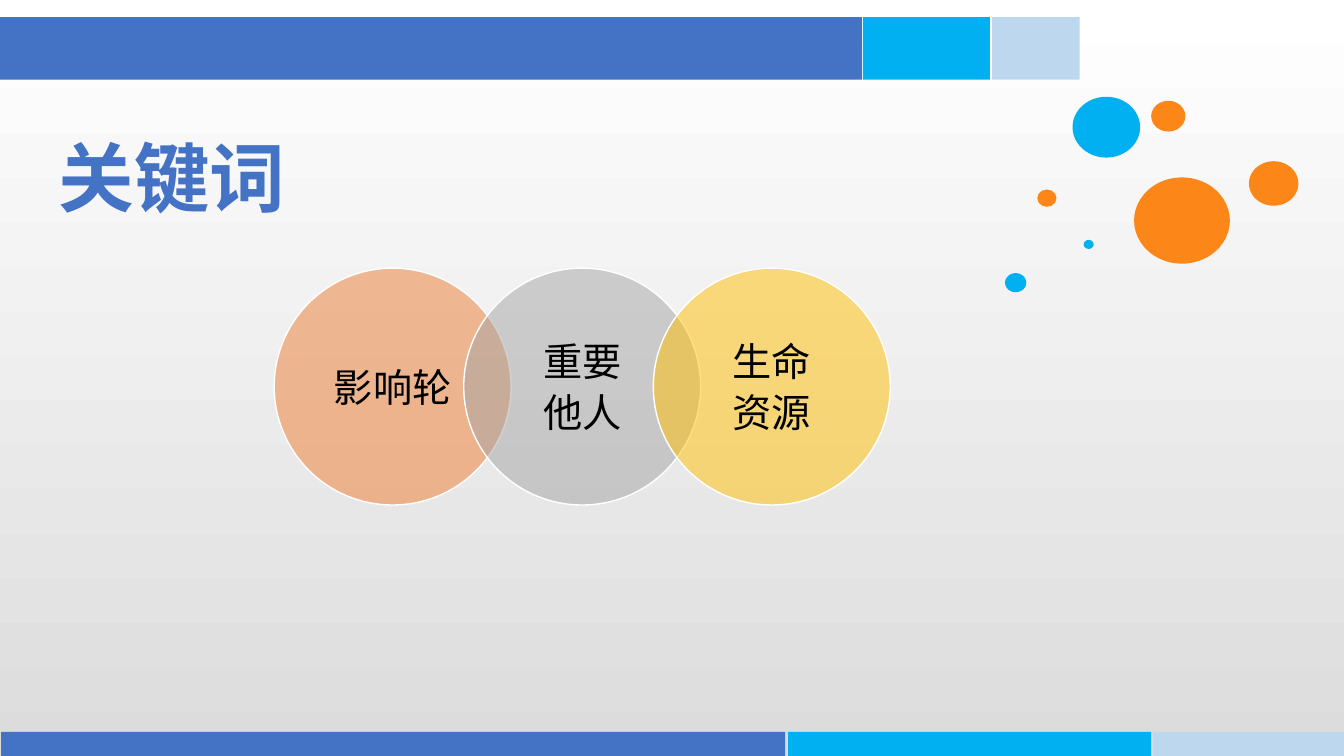
from lxml.etree import SubElement
from pptx import Presentation
from pptx.dml.color import RGBColor
from pptx.enum.shapes import MSO_SHAPE as Preset
from pptx.enum.text import MSO_ANCHOR as Anchor, MSO_AUTO_SIZE as AutoSize, PP_ALIGN as Align
from pptx.oxml.ns import qn
from pptx.util import Inches, Pt

BLUE = RGBColor(0x44, 0x72, 0xC4)
CYAN = RGBColor(0x00, 0xB0, 0xF0)
PALE = RGBColor(0xBD, 0xD7, 0xEE)
ORANGE = RGBColor(0xFC, 0x86, 0x18)
CORAL = RGBColor(0xED, 0x7D, 0x31)
GREY = RGBColor(0xA5, 0xA5, 0xA5)
GOLD = RGBColor(0xFF, 0xC0, 0x00)
WHITE = RGBColor(0xFF, 0xFF, 0xFF)
SILVER = RGBColor(0xDC, 0xDC, 0xDC)
BLACK = RGBColor(0x00, 0x00, 0x00)
CJK = "Noto Sans CJK SC"

deck = Presentation()
deck.slide_width, deck.slide_height = Inches(13.33), Inches(7.5)
COL, ROW = deck.slide_width / 100, deck.slide_height / 100
slide = deck.slides.add_slide(deck.slide_layouts[5])


def add_block(parent, preset, left, top, width, height, color):
    block = parent.add_shape(preset, round(left * COL), round(top * ROW),
                             round(width * COL), round(height * ROW))
    block.shadow.inherit = False
    block.fill.solid()
    block.fill.fore_color.rgb = color
    block.line.fill.background()
    return block


def write(frame, text, *, size, color, font, bold=False, spacing=1.0, after=0):
    frame.word_wrap = True
    frame.auto_size = AutoSize.NONE
    frame.vertical_anchor = Anchor.MIDDLE
    frame.text = text
    for paragraph in frame.paragraphs:
        paragraph.alignment = Align.CENTER
        paragraph.line_spacing = spacing
        paragraph.space_after = Pt(after)
        for run in paragraph.runs:
            run.font.size = Pt(size)
            run.font.bold = bold
            run.font.color.rgb = color
            run.font.name = font
            SubElement(run.font._element, qn("a:ea"), typeface=CJK)


backdrop = slide.background.fill
backdrop.gradient()
backdrop.gradient_angle = 270
for stop, color, position in zip(backdrop.gradient_stops, (WHITE, SILVER), (0, 1)):
    stop.color.rgb = color
    stop.position = position

bands = [
    (2.27, 8.27, [(0, 64.13), (64.2, 9.45), (73.8, 6.53)]),
    (96.8, 3.2, [(0.08, 58.35), (58.65, 27), (85.8, 14.2)]),
]
for top, height, pieces in bands:
    for (left, width), color in zip(pieces, (BLUE, CYAN, PALE)):
        add_block(slide.shapes, Preset.RECTANGLE, left, top, width, height, color)

bubbles = slide.shapes.add_group_shape().shapes
for left, top, width, color in [
    (74.78, 36.13, 1.58, CYAN),
    (84.38, 23.47, 7.13, ORANGE),
    (79.8, 12.8, 5.03, CYAN),
    (92.93, 21.33, 3.68, ORANGE),
    (85.65, 13.33, 2.55, ORANGE),
    (77.18, 25.07, 1.43, ORANGE),
    (80.63, 31.73, 0.75, CYAN),
]:
    add_block(bubbles, Preset.OVAL, left, top, width, width * 1.6, color)

heading = slide.shapes.title
heading.left, heading.top = round(2.55 * COL), round(17.33 * ROW)
heading.width, heading.height = round(20.48 * COL), round(13.6 * ROW)
write(heading.text_frame, "关键词", size=54, color=BLUE, font=CJK, bold=True, spacing=0.9)

keywords = slide.shapes.add_group_shape().shapes
diameter = 17.63
for index, (keyword, color) in enumerate(
    [("影响轮", CORAL), ("重要\n他人", GREY), ("生命\n资源", GOLD)]
):
    circle = add_block(keywords, Preset.OVAL, 20.4 + index * diameter * 0.8, 35.47,
                       diameter, diameter * COL / ROW, color)
    tint = circle.fill._xPr.find(qn("a:solidFill"))[0]
    SubElement(tint, qn("a:alpha"), val="50000")
    circle.line.color.rgb = WHITE
    circle.line.width = Pt(1)
    frame = circle.text_frame
    frame.margin_left = frame.margin_right = round(COL)
    frame.margin_top = frame.margin_bottom = round(ROW / 2)
    write(frame, keyword, size=28, color=BLACK, font="Arial", after=3)

deck.save("out.pptx")
